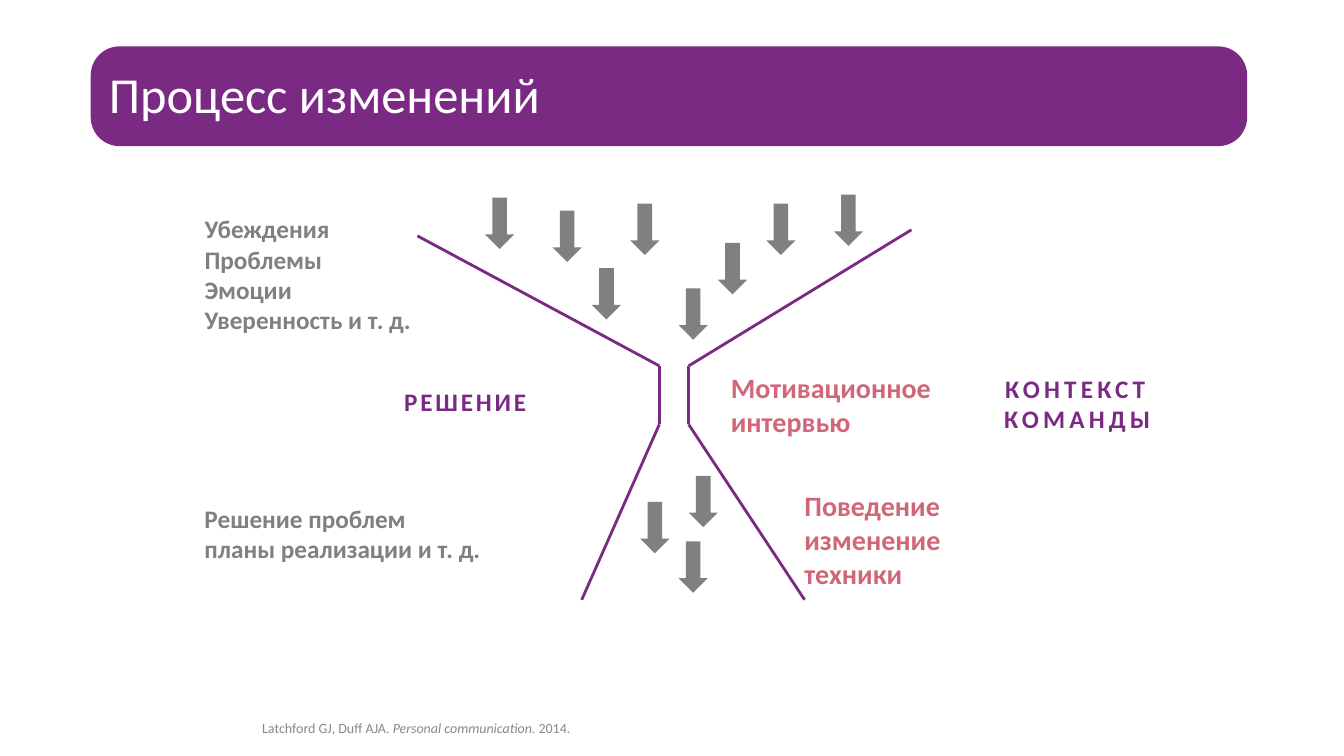
from dataclasses import dataclass

import lxml.etree
import pptx
import pptx.dml.color
import pptx.enum.shapes
import pptx.enum.text
import pptx.oxml.ns
import pptx.util

EMU_PER_PX = 9144  # 100 px to the inch
PURPLE, ROSE, GREY, PALE_GREY, WHITE = "7B2A84", "D16678", "808080", "898989", "FFFFFF"
FONT_NAME = "Calibri"
ARROW_WIDTH, ARROW_HEIGHT = 29, 51
MSO_SHAPE = pptx.enum.shapes.MSO_SHAPE
ANCHOR = pptx.enum.text.MSO_ANCHOR
ALIGN = pptx.enum.text.PP_ALIGN


@dataclass(frozen=True)
class Label:
    text: str
    left: int
    top: int
    width: int
    height: int
    size: int
    color: str
    bold: bool = True
    spacing: int = 0  # letter spacing in points
    align: ALIGN = ALIGN.LEFT
    anchor: ANCHOR = ANCHOR.TOP
    inset: bool = True
    line_spacing: float = 1.0


@dataclass(frozen=True)
class Segment:
    start: tuple[int, int]
    end: tuple[int, int]


TITLE = Label("Процесс изменений", 108, 62, 1118, 72, 36, WHITE, bold=False,
              anchor=ANCHOR.MIDDLE, inset=False, line_spacing=0.8)
CITATION = Label("Latchford GJ, Duff AJA. ", 260, 646, 982, 85, 10, PALE_GREY, bold=False,
                 anchor=ANCHOR.BOTTOM, inset=False, line_spacing=0.9)
CITATION_REST = [("Personal communication", True), (". 2014.", False)]

LABELS = [
    Label("Мотивационное интервью", 715, 363, 231, 77, 20, ROSE),
    Label("РЕШЕНИЕ", 391, 378, 241, 40, 18, PURPLE, spacing=2),
    Label("Поведение\nизменение\nтехники", 788, 480, 297, 110, 20, ROSE),
    Label("Решение проблем\nпланы реализации и т. д.", 193, 494, 316, 70, 18, GREY),
    Label("Убеждения\nПроблемы\nЭмоции\nУверенность и т. д.", 193, 207, 318, 130, 18, GREY),
    Label("КОНТЕКСТ КОМАНДЫ", 933, 365, 271, 70, 18, PURPLE, spacing=3, align=ALIGN.CENTER),
]

# Corners of the funnel neck
NECK_LEFT, NECK_RIGHT, NECK_TOP, NECK_BOTTOM = 654, 683, 363, 421
FUNNEL = [
    Segment((414, 234), (NECK_LEFT, NECK_TOP)),
    Segment((NECK_RIGHT, NECK_TOP), (904, 228)),
    Segment((NECK_LEFT, NECK_TOP), (NECK_LEFT, NECK_BOTTOM)),
    Segment((NECK_RIGHT, NECK_TOP), (NECK_RIGHT, NECK_BOTTOM)),
    Segment((NECK_RIGHT, NECK_BOTTOM), (798, 595)),
    Segment((NECK_LEFT, NECK_BOTTOM), (577, 595)),
]

# Top left corners of the arrows flowing in and out
ARROWS_IN = [(481, 196), (548, 209), (587, 266), (625, 202),
             (673, 286), (760, 202), (712, 241), (827, 193)]
ARROWS_OUT = [(635, 498), (673, 537), (683, 472)]


def px(length: int) -> pptx.util.Emu:
    return pptx.util.Emu(length * EMU_PER_PX)


def rgb(color: str) -> pptx.dml.color.RGBColor:
    return pptx.dml.color.RGBColor.from_string(color)


def add_filled_shape(slide, kind: MSO_SHAPE, left: int, top: int,
                     width: int, height: int, color: str):
    shape = slide.shapes.add_shape(kind, px(left), px(top), px(width), px(height))
    shape.shadow.inherit = False
    shape.fill.solid()
    shape.fill.fore_color.rgb = rgb(color)
    shape.line.fill.background()
    return shape


def add_segment(slide, segment: Segment) -> None:
    connector = slide.shapes.add_connector(
        pptx.enum.shapes.MSO_CONNECTOR.STRAIGHT,
        *map(px, segment.start), *map(px, segment.end))
    connector.line.color.rgb = rgb(PURPLE)
    connector.line.width = pptx.util.Pt(2)
    lxml.etree.SubElement(connector._element.spPr, pptx.oxml.ns.qn("a:effectLst"))


def format_run(run, label: Label, italic: bool = False) -> None:
    run.font.name = FONT_NAME
    run.font.size = pptx.util.Pt(label.size)
    run.font.bold = label.bold
    run.font.italic = italic
    run.font.color.rgb = rgb(label.color)
    if label.spacing:
        run._r.get_or_add_rPr().set("spc", str(label.spacing * 100))


def add_label(slide, label: Label):
    box = slide.shapes.add_textbox(px(label.left), px(label.top),
                                   px(label.width), px(label.height))
    text_frame = box.text_frame
    text_frame.word_wrap = True
    text_frame.vertical_anchor = label.anchor
    if not label.inset:
        text_frame.margin_left = text_frame.margin_right = 0
        text_frame.margin_top = text_frame.margin_bottom = 0
    text_frame.text = label.text
    for paragraph in text_frame.paragraphs:
        paragraph.alignment = label.align
        paragraph.line_spacing = label.line_spacing
        for run in paragraph.runs:
            format_run(run, label)
    return text_frame


def main() -> None:
    presentation = pptx.Presentation()
    presentation.slide_width = pptx.util.Inches(13.33)
    presentation.slide_height = pptx.util.Inches(7.5)
    slide = presentation.slides.add_slide(presentation.slide_layouts[6])

    # Title banner
    banner = add_filled_shape(slide, MSO_SHAPE.ROUNDED_RECTANGLE, 90, 46, 1147, 99, PURPLE)
    banner.adjustments[0] = 0.29
    add_label(slide, TITLE)

    # Citation
    citation = add_label(slide, CITATION).paragraphs[0]
    for text, italic in CITATION_REST:
        run = citation.add_run()
        run.text = text
        format_run(run, CITATION, italic)

    # Funnel with its arrows and labels
    for segment in FUNNEL:
        add_segment(slide, segment)
    for left, top in ARROWS_IN + ARROWS_OUT:
        add_filled_shape(slide, MSO_SHAPE.DOWN_ARROW, left, top,
                         ARROW_WIDTH, ARROW_HEIGHT, GREY)
    for label in LABELS:
        add_label(slide, label)

    presentation.save("out.pptx")


if __name__ == "__main__":
    main()
